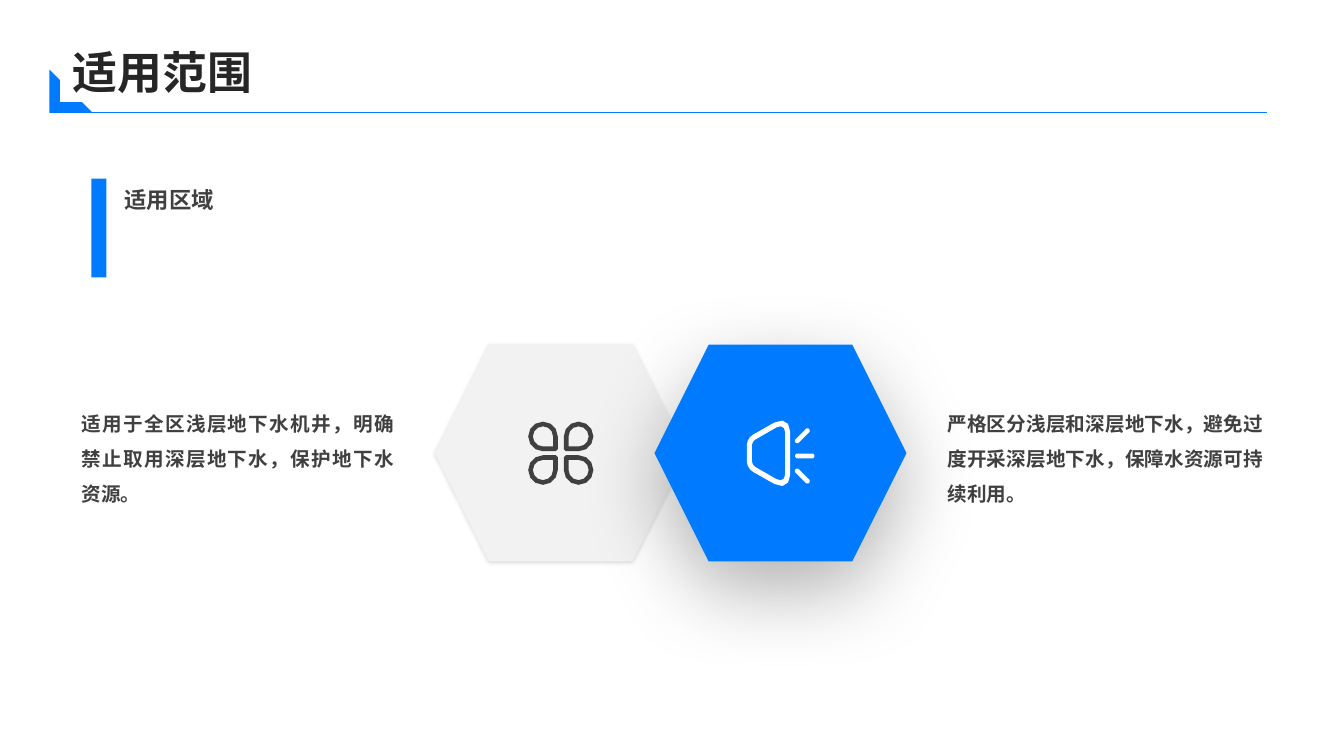
import math

from lxml import etree
from pptx import Presentation
from pptx import util as u
from pptx.dml.color import RGBColor
from pptx.enum import shapes, text
from pptx.oxml import ns

UNIT = u.Inches(1) / 3
COLUMNS, ROWS = 40, 22.5
FONT = "Noto Sans CJK SC"
BLUE = RGBColor(0x00, 0x7B, 0xFF)
PALE = RGBColor(0xF2, 0xF2, 0xF2)
WHITE = RGBColor(0xFF, 0xFF, 0xFF)
GRAY = RGBColor(0x40, 0x40, 0x40)
INK = RGBColor(0x26, 0x26, 0x26)
ARC = 0.55


def grid(*lengths):
    return [round(length * UNIT) for length in lengths]


def paint(shape, color):
    shape.shadow.inherit = False
    shape.fill.solid()
    shape.fill.fore_color.rgb = color
    shape.line.fill.background()


def add_block(slide, kind, box, color):
    shape = slide.shapes.add_shape(kind, *grid(*box))
    paint(shape, color)
    return shape


def add_hexagon(slide, left, color, opacity, blur, distance):
    shape = add_block(slide, shapes.MSO_SHAPE.HEXAGON, (left, 10.26, 7.5, 6.45), color)
    effects = shape._element.spPr.find(ns.qn("a:effectLst"))
    shadow = etree.SubElement(effects, ns.qn("a:outerShdw"), blurRad=str(u.Pt(blur)),
                              dist=str(u.Pt(distance)), dir="5400000", rotWithShape="0")
    tint = etree.SubElement(shadow, ns.qn("a:srgbClr"), val="000000")
    etree.SubElement(tint, ns.qn("a:alpha"), val=str(opacity * 1000))


def add_text(slide, box, wording, size, color, spacing, margin=0, grow=False):
    frame = slide.shapes.add_textbox(*grid(*box)).text_frame
    frame.word_wrap = True
    frame.vertical_anchor = text.MSO_ANCHOR.MIDDLE
    frame.margin_left = frame.margin_right = 0
    frame.margin_top = frame.margin_bottom = grid(margin)[0]
    if grow:
        frame.auto_size = text.MSO_AUTO_SIZE.SHAPE_TO_FIT_TEXT
    frame.text = wording
    paragraph = frame.paragraphs[0]
    paragraph.alignment = text.PP_ALIGN.JUSTIFY
    paragraph.line_spacing = spacing
    font = paragraph.runs[0].font
    font.name, font.size, font.bold = FONT, u.Pt(size), True
    font.color.rgb = color
    etree.SubElement(font._element, ns.qn("a:ea"), typeface=FONT)


def add_rule(slide, start, end, color):
    rule = slide.shapes.add_connector(shapes.MSO_CONNECTOR.STRAIGHT, *grid(*start, *end))
    rule.line.color.rgb = color
    rule.line.width = u.Pt(1)
    etree.SubElement(rule._element.spPr, ns.qn("a:effectLst"))


def toward(start, end, share):
    return tuple(a + (b - a) * share for a, b in zip(start, end))


def rounded_outline(corners, cuts):
    outline = []
    for index, (corner, cut) in enumerate(zip(corners, cuts)):
        if not cut:
            outline.append(corner)
            continue
        before, after = corners[index - 1], corners[(index + 1) % len(corners)]
        first = toward(corner, before, cut / math.dist(corner, before))
        last = toward(corner, after, cut / math.dist(corner, after))
        pull, push = toward(first, corner, ARC), toward(last, corner, ARC)
        steps = 3 if cut > 0.1 else 1
        for step in range(steps + 1):
            t = step / steps
            weights = ((1 - t) ** 3, 3 * t * (1 - t) ** 2, 3 * t * t * (1 - t), t ** 3)
            point = tuple(sum(w * p[axis] for w, p in zip(weights, (first, pull, push, last)))
                          for axis in (0, 1))
            if not outline or math.dist(point, outline[-1]) > 0.01:
                outline.append(point)
    return outline


def add_icon(slide, outlines, color):
    builder = None
    for outline in outlines:
        points = [grid(*point) for point in outline]
        if builder is None:
            builder = slide.shapes.build_freeform(*points[0])
        else:
            builder.move_to(*points[0])
        builder.add_line_segments(points[1:], close=True)
    paint(builder.convert_to_shape(), color)


def clover_outlines():
    outlines = []
    for across in (-1, 1):
        for down in (-1, 1):
            for inset, tip in ((0, 0.06), (0.14, 0)):
                size = 0.88 - 2 * inset
                x = 16.69 + across * (0.09 + inset)
                y = 13.49 + down * (0.06 + inset)
                far_x, far_y = x + across * size, y + down * size
                corners = [(x, y), (far_x, y), (far_x, far_y), (x, far_y)]
                outlines.append(rounded_outline(corners, [tip] + [size / 2] * 3))
    return outlines


def ray_outline(start, end, half=0.07):
    length = math.dist(start, end)
    dx, dy = ((b - a) / length * half for a, b in zip(start, end))
    (x1, y1), (x2, y2) = start, end
    corners = [(x1 - dx - dy, y1 - dy + dx), (x1 - dx + dy, y1 - dy - dx),
               (x2 + dx + dy, y2 + dy - dx), (x2 + dx - dy, y2 + dy + dx)]
    return rounded_outline(corners, [half * 0.6] * 4)


def horn_outlines():
    axis = 13.49
    outlines = []
    for left, right, short, tall, back, front in ((22.23, 23.52, 0.45, 1.18, 0.2, 0.54),
                                                  (22.38, 23.37, 0.35, 0.92, 0.12, 0.3)):
        corners = [(left, axis - short), (right, axis - tall),
                   (right, axis + tall), (left, axis + short)]
        outlines.append(rounded_outline(corners, [back, front, front, back]))
    for side in (-1, 1):
        outlines.append(ray_outline((23.73, 13.57 + side * 0.45), (24.03, 13.57 + side * 0.75)))
    outlines.append(ray_outline((23.74, 13.57), (24.17, 13.57)))
    return outlines


def main():
    presentation = Presentation()
    presentation.slide_width, presentation.slide_height = grid(COLUMNS, ROWS)
    slide = presentation.slides.add_slide(presentation.slide_layouts[6])

    for left, width, wording in (
            (28.2, 9.4, "严格区分浅层和深层地下水，避免过度开采深层地下水，保障水资源可持续利用。"),
            (2.43, 9.3, "适用于全区浅层地下水机井，明确禁止取用深层地下水，保护地下水资源。")):
        add_text(slide, (left, 9.94, width, 7.08), wording, 14, GRAY, 1.5, margin=0.12)

    add_hexagon(slide, 12.94, PALE, opacity=15, blur=3, distance=1)
    add_icon(slide, clover_outlines(), GRAY)
    add_hexagon(slide, 19.48, BLUE, opacity=30, blur=60, distance=20)
    add_icon(slide, horn_outlines(), WHITE)

    add_text(slide, (3.71, 5.13, 31.32, 1.2), "适用区域", 16, GRAY, 1.5, grow=True)
    add_block(slide, shapes.MSO_SHAPE.RECTANGLE, (2.72, 5.32, 0.45, 2.94), BLUE)

    add_text(slide, (2.17, 1.29, 35.64, 1.53), "适用范围", 32, INK, 1.1)
    bracket = add_block(slide, shapes.MSO_SHAPE.HALF_FRAME, (1.47, 2.07, 1.29, 1.29), BLUE)
    bracket.rotation = 270
    bracket.adjustments[0], bracket.adjustments[1] = 0.24, 0.25
    add_rule(slide, (2.28, 3.35), (37.72, 3.35), BLUE)

    presentation.save("out.pptx")


if __name__ == "__main__":
    main()
